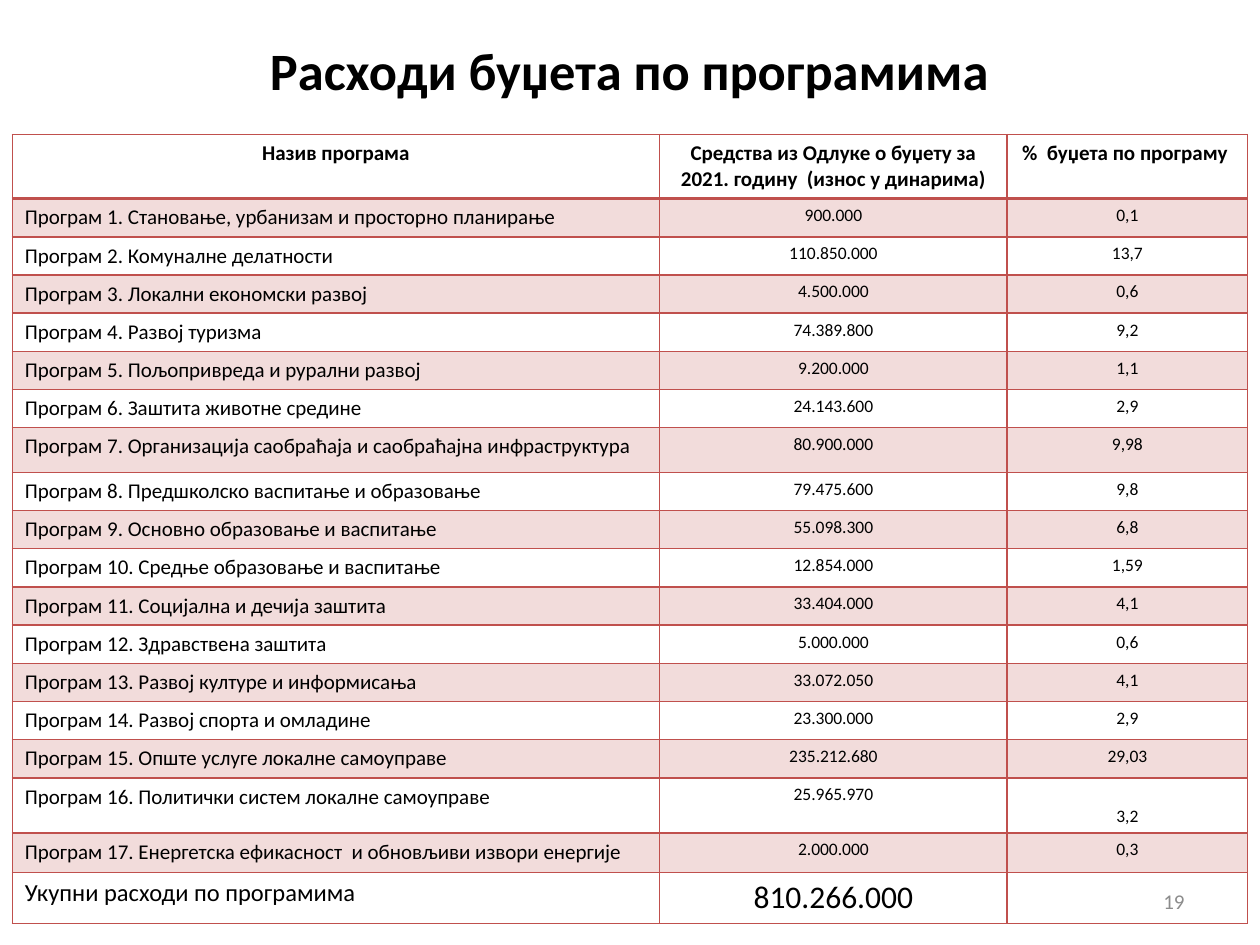
from lxml import etree
from pptx import Presentation
from pptx.dml.color import RGBColor
from pptx.enum.text import MSO_ANCHOR, PP_ALIGN
from pptx.oxml.ns import qn
from pptx.util import Pt

LEFT, CENTER, RIGHT = PP_ALIGN.LEFT, PP_ALIGN.CENTER, PP_ALIGN.RIGHT
TOP, MIDDLE, BOTTOM = MSO_ANCHOR.TOP, MSO_ANCHOR.MIDDLE, MSO_ANCHOR.BOTTOM
TITLE_ONLY = 5

BLACK = RGBColor(0x00, 0x00, 0x00)
GREY = RGBColor(0x8C, 0x8C, 0x8C)
RED = RGBColor(0xC0, 0x50, 0x4D)
BAND_OPACITY = 20

HEADERS = (
    "Назив програма",
    "Средства из Одлуке о буџету за 2021. годину  (износ у динарима)",
    "%  буџета по програму ",
)
PROGRAMS = (
    ("Становање, урбанизам и просторно планирање", "900.000", "0,1"),
    ("Комуналне делатности", "110.850.000", "13,7"),
    ("Локални економски развој", "4.500.000", "0,6"),
    ("Развој туризма", "74.389.800", "9,2"),
    ("Пољопривреда и рурални развој", "9.200.000", "1,1"),
    ("Заштита животне средине", "24.143.600", "2,9"),
    ("Организација саобраћаја и саобраћајна инфраструктура", "80.900.000", "9,98"),
    ("Предшколско васпитање и образовање", "79.475.600", "9,8"),
    ("Основно образовање и васпитање", "55.098.300", "6,8"),
    ("Средње образовање и васпитање", "12.854.000", "1,59"),
    ("Социјална и дечија заштита", "33.404.000", "4,1"),
    ("Здравствена заштита", "5.000.000", "0,6"),
    ("Развој културе и информисања", "33.072.050", "4,1"),
    ("Развој спорта и омладине", "23.300.000", "2,9"),
    ("Опште услуге локалне самоуправе", "235.212.680", "29,03"),
    ("Политички систем локалне самоуправе", "25.965.970", "3,2"),
    ("Енергетска ефикасност  и обновљиви извори енергије", "2.000.000", "0,3"),
)
TOTAL = ("Укупни расходи по програмима", "810.266.000", "")

COLUMN_WIDTHS = (370, 198.5, 137.5)
ROW_HEIGHT = 21.85
TOTAL_ROW = len(PROGRAMS) + 1
SPECIAL_HEIGHTS = {0: 36.5, 7: 25.5, 16: 31.5, 17: 22.5, TOTAL_ROW: 29.2}


class SlideBuilder:
    """Holds the font and the slide being filled; lengths are in points."""

    font = "Calibri"

    def __init__(self, slide):
        self.slide = slide

    def add_text(self, frame, text, size, align=LEFT, bold=False, color=BLACK):
        paragraph = frame.paragraphs[0]
        paragraph.alignment = align
        if text:
            run = paragraph.add_run()
            run.text = text
            run.font.name = self.font
            run.font.size = Pt(size)
            run.font.bold = bold
            run.font.color.rgb = color

    def title(self, text, left, top, width, height):
        shape = self.slide.shapes.title
        shape.left, shape.top = Pt(left), Pt(top)
        shape.width, shape.height = Pt(width), Pt(height)
        shape.text_frame.vertical_anchor = MIDDLE
        self.add_text(shape.text_frame, text, 30, CENTER, bold=True)

    def page_number(self, text, left, top, width, height):
        shape = self.slide.shapes.add_textbox(
            Pt(left), Pt(top), Pt(width), Pt(height))
        frame = shape.text_frame
        frame.word_wrap = True
        frame.vertical_anchor = MIDDLE
        self.add_text(frame, text, 12, RIGHT, color=GREY)

    def table(self, left, top, widths, heights):
        frame = self.slide.shapes.add_table(
            len(heights), len(widths), Pt(left), Pt(top),
            Pt(sum(widths)), Pt(sum(heights)))
        table = frame.table
        table.first_row = table.horz_banding = False
        for column, width in zip(table.columns, widths):
            column.width = Pt(width)
        for row, height in zip(table.rows, heights):
            row.height = Pt(height)
        return table

    def cell(self, cell, text, size, align, bold=False, banded=False,
             top_line=1, bottom_line=1, anchor=TOP):
        self.add_text(cell.text_frame, text, size, align, bold)
        cell.vertical_anchor = anchor
        self.borders(cell, {"L": 1, "R": 1, "T": top_line, "B": bottom_line})
        if banded:
            cell.fill.solid()
            cell.fill.fore_color.rgb = RED
            color = cell._tc.tcPr.find(qn("a:solidFill")).find(qn("a:srgbClr"))
            etree.SubElement(color, qn("a:alpha"), val=str(BAND_OPACITY * 1000))
        else:
            cell.fill.background()

    def borders(self, cell, widths):
        properties = cell._tc.get_or_add_tcPr()
        for side, width in widths.items():
            line = etree.SubElement(properties, qn(f"a:ln{side}"), w=str(Pt(width)))
            fill = etree.SubElement(line, qn("a:solidFill"))
            etree.SubElement(fill, qn("a:srgbClr"), val=str(RED))


def fill_budget_table(builder, table):
    for column, text in enumerate(HEADERS):
        builder.cell(table.cell(0, column), text, 12, CENTER, bold=True, bottom_line=2)

    for number, (name, amount, share) in enumerate(PROGRAMS, start=1):
        line = {"banded": number % 2 == 1, "top_line": 2 if number == 1 else 1}
        share_anchor = BOTTOM if number == 16 else TOP
        builder.cell(table.cell(number, 0), f"Програм {number}. {name}", 12, LEFT, **line)
        builder.cell(table.cell(number, 1), amount, 10, CENTER, **line)
        builder.cell(table.cell(number, 2), share, 10, CENTER, anchor=share_anchor, **line)

    formats = ((14, LEFT), (18, CENTER), (18, CENTER))
    for column, (text, (size, align)) in enumerate(zip(TOTAL, formats)):
        builder.cell(table.cell(TOTAL_ROW, column), text, size, align)


def main():
    presentation = Presentation()
    presentation.slide_width, presentation.slide_height = Pt(720), Pt(540)
    layout = presentation.slide_layouts[TITLE_ONLY]
    builder = SlideBuilder(presentation.slides.add_slide(layout))

    builder.title("Расходи буџета по програмима", 53, 9.5, 613.5, 61)
    builder.page_number("19", 516, 500.5, 168, 28.75)
    heights = [SPECIAL_HEIGHTS.get(row, ROW_HEIGHT) for row in range(TOTAL_ROW + 1)]
    table = builder.table(7, 77, COLUMN_WIDTHS, heights)
    fill_budget_table(builder, table)

    presentation.save("out.pptx")


if __name__ == "__main__":
    main()
